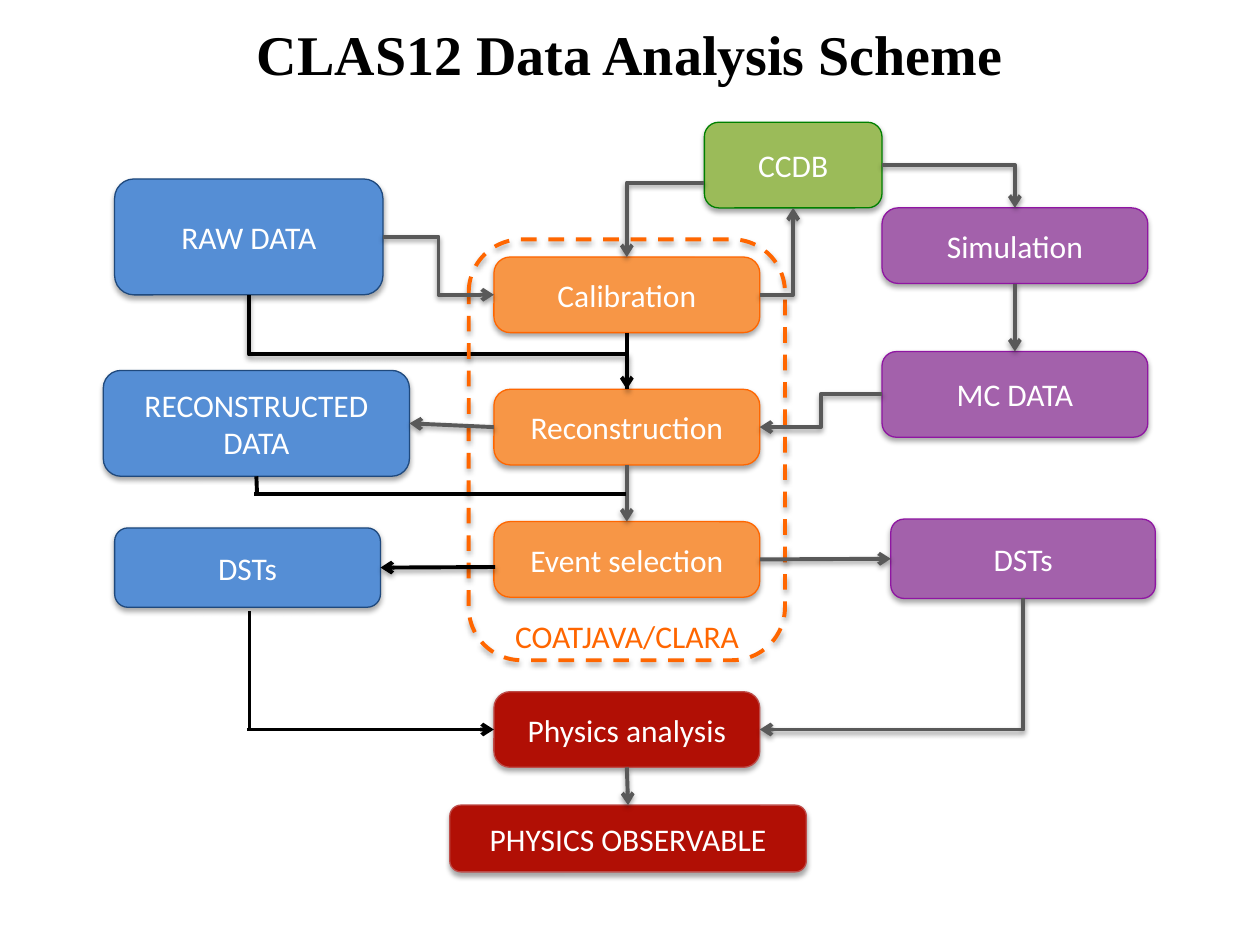
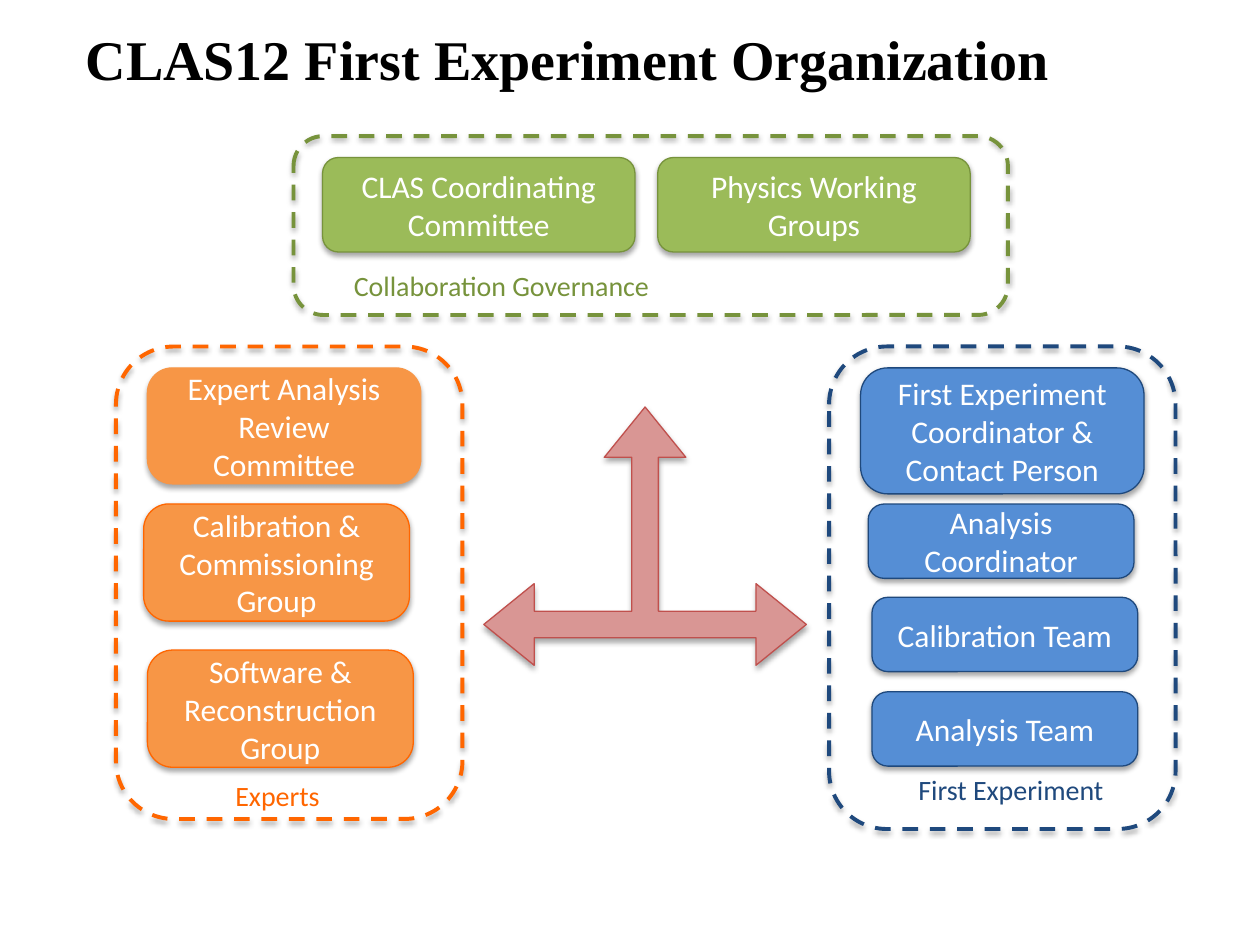
from lxml.etree import SubElement
from pptx import Presentation
from pptx.dml.color import RGBColor
from pptx.enum.dml import MSO_LINE
from pptx.enum.shapes import MSO_CONNECTOR as LINK, MSO_SHAPE as SHAPE
from pptx.enum.text import MSO_ANCHOR as ANCHOR, MSO_AUTO_SIZE as AUTO_SIZE, PP_ALIGN as ALIGN
from pptx.oxml.ns import qn
from pptx.util import Inches, Pt

TOP, LEFT, BOTTOM, RIGHT = range(4)

BLACK, WHITE, GREY = "000000", "FFFFFF", "595959"
# Each scheme is a fill and an outline
BLUE = ("558ED5", "1F497D")
GREEN = ("9BBB59", "77933C")
BRIGHT_GREEN = ("9BBB59", "008000")
ORANGE = ("F79646", "FF6600")
PLAIN_ORANGE = ("F79646", "F79646")
PURPLE = ("A361AB", "8F16A2")
RED = ("B10F05", "BE4B48")
PINK = ("D99694", "C0504D")

SMALL_CORNER, LARGE_CORNER = 0.167, 0.215


def color(hex_text):
    return RGBColor.from_string(hex_text)


def add_shadow(spPr, opacity, distance):
    effects = spPr.find(qn("a:effectLst"))
    shadow = SubElement(effects, qn("a:outerShdw"), blurRad=str(Pt(3.1)),
                        dist=str(Pt(distance)), dir="5400000", rotWithShape="0")
    black = SubElement(shadow, qn("a:srgbClr"), val=BLACK)
    SubElement(black, qn("a:alpha"), val=str(opacity * 1000))


class Diagram:
    """Holds the deck, the shared style and the current page."""

    def __init__(self):
        self.deck = Presentation()
        self.deck.slide_width, self.deck.slide_height = Inches(10), Inches(7.5)
        self.page = None

    def new_page(self, title, left, top, width):
        self.page = self.deck.slides.add_slide(self.deck.slide_layouts[5])
        box = self.page.shapes.title
        box.left, box.top = Inches(left), Inches(top)
        box.width, box.height = Inches(width), Inches(0.43)
        frame = box.text_frame
        frame.margin_left = frame.margin_right = frame.margin_top = frame.margin_bottom = 0
        frame.vertical_anchor = ANCHOR.MIDDLE
        self.fill_text(frame, title, 32, BLACK, ALIGN.CENTER, "Times New Roman", True)

    def fill_text(self, frame, text, size, ink, align, font="Calibri", bold=False):
        frame.text = text
        frame.auto_size = AUTO_SIZE.NONE
        for para in frame.paragraphs:
            para.alignment = align
            for span in para.runs:
                span.font.name, span.font.size, span.font.bold = font, Pt(size), bold
                span.font.color.rgb = color(ink)

    def shape(self, kind, place, scheme, adjustments, line_width=0.75):
        shape = self.page.shapes.add_shape(kind, *map(Inches, place))
        for index, value in enumerate(adjustments):
            shape.adjustments[index] = value
        fill, outline = scheme
        if fill:
            shape.fill.solid()
            shape.fill.fore_color.rgb = color(fill)
        else:
            shape.fill.background()
        shape.line.color.rgb = color(outline)
        shape.line.width = Pt(line_width)
        shape.shadow.inherit = False
        add_shadow(shape.element.spPr, 35, 1.8)
        return shape

    def box(self, text, place, scheme, corner=SMALL_CORNER):
        box = self.shape(SHAPE.ROUNDED_RECTANGLE, place, scheme, [corner])
        frame = box.text_frame
        frame.word_wrap = True
        frame.vertical_anchor = ANCHOR.MIDDLE
        self.fill_text(frame, text, 18, WHITE, ALIGN.CENTER)
        return box

    def group_frame(self, place, scheme):
        frame = self.shape(SHAPE.ROUNDED_RECTANGLE, place, (None, scheme[1]), [SMALL_CORNER], 2.25)
        frame.line.dash_style = MSO_LINE.DASH

    def label(self, text, place, size, scheme):
        box = self.page.shapes.add_textbox(*map(Inches, place))
        box.text_frame.word_wrap = False
        self.fill_text(box.text_frame, text, size, scheme[1], ALIGN.LEFT)

    def link(self, start, end, ink=GREY, kind=LINK.STRAIGHT, arrow=True, shadow=True):
        """Join two ends; each is a (box, side) pair or an (x, y) point in inches."""
        def is_point(target):
            return isinstance(target[0], (int, float))

        points = [value for target in (start, end)
                  for value in (map(Inches, target) if is_point(target) else (0, 0))]
        link = self.page.shapes.add_connector(kind, *points)
        if not is_point(start):
            link.begin_connect(*start)
        if not is_point(end):
            link.end_connect(*end)
        link.line.color.rgb = color(ink)
        link.line.width = Pt(2.25)
        spPr = link.element.spPr
        if arrow:
            SubElement(spPr.find(qn("a:ln")), qn("a:tailEnd"), type="arrow")
        SubElement(spPr, qn("a:effectLst"))
        if shadow:
            add_shadow(spPr, 38, 1.6)
        return link

    def elbow(self, start, end, ink=GREY, corners=1, bend=0.5, vertical=False, arrow=True):
        """Bent link with one or two corners; vertical ones leave the start up or down."""
        link = self.link(start, end, ink, LINK.ELBOW, arrow)
        spPr = link.element.spPr
        geometry = spPr.find(qn("a:prstGeom"))
        geometry.set("prst", f"bentConnector{corners + 1}")
        if corners == 2:
            SubElement(geometry.find(qn("a:avLst")), qn("a:gd"),
                       name="adj1", fmla=f"val {round(bend * 100000)}")
        if vertical:
            down, rightward = link.end_y > link.begin_y, link.end_x > link.begin_x
            center_x = (link.begin_x + link.end_x) // 2
            center_y = (link.begin_y + link.end_y) // 2
            link.width, link.height = link.height, link.width
            link.left, link.top = center_x - link.width // 2, center_y - link.height // 2
            frame = spPr.find(qn("a:xfrm"))
            frame.set("rot", str((90 if down else 270) * 60000))
            frame.set("flipH", "0")
            frame.set("flipV", "1" if down == rightward else "0")


def draw_analysis_scheme(diagram):
    diagram.new_page("CLAS12 Data Analysis Scheme", 0.5, 0.21, 9)
    box, link, elbow = diagram.box, diagram.link, diagram.elbow

    raw = box("RAW DATA", (0.91, 1.42, 2.13, 0.92), BLUE)
    reconstructed = box("RECONSTRUCTED DATA", (0.82, 2.94, 2.43, 0.84), BLUE)
    data_dsts = box("DSTs", (0.91, 4.19, 2.11, 0.63), BLUE)
    ccdb = box("CCDB", (5.59, 0.97, 1.41, 0.68), BRIGHT_GREEN)
    calibration, reconstruction, selection = [
        box(text, (3.92, 2.04 + 1.05 * row, 2.11, 0.6), ORANGE, LARGE_CORNER)
        for row, text in enumerate(("Calibration", "Reconstruction", "Event selection"))]
    simulation = box("Simulation", (7, 1.65, 2.11, 0.6), PURPLE, LARGE_CORNER)
    mc_data = box("MC DATA", (7, 2.79, 2.11, 0.68), PURPLE)
    mc_dsts = box("DSTs", (7.07, 4.12, 2.1, 0.63), PURPLE)
    physics = box("Physics analysis", (3.92, 5.49, 2.11, 0.6), RED, LARGE_CORNER)
    observable = box("PHYSICS OBSERVABLE", (3.57, 6.39, 2.83, 0.53), RED)

    elbow((reconstruction, TOP), (raw, BOTTOM), BLACK, corners=2, bend=0.37,
          vertical=True, arrow=False)
    diagram.group_frame((3.72, 1.9, 2.51, 3.34), ORANGE)
    diagram.label("COATJAVA/CLARA", (3.99, 4.85, 1.97, 0.4), 18, ORANGE)

    elbow((raw, RIGHT), (calibration, LEFT), corners=2)
    elbow((5.59, 1.45), (calibration, TOP))
    elbow((ccdb, RIGHT), (simulation, TOP))
    elbow((calibration, RIGHT), (ccdb, BOTTOM))
    elbow((mc_data, LEFT), (reconstruction, RIGHT), corners=2)
    elbow((mc_dsts, BOTTOM), (physics, RIGHT), vertical=True)

    link((simulation, BOTTOM), (mc_data, TOP))
    link((reconstruction, LEFT), (reconstructed, RIGHT))
    link((reconstruction, BOTTOM), (selection, TOP))
    link((selection, RIGHT), (mc_dsts, LEFT))
    link((physics, BOTTOM), (observable, TOP))
    link((3.93, 4.5), (data_dsts, RIGHT), BLACK)
    link((calibration, BOTTOM), (reconstruction, TOP), BLACK, shadow=False)
    link((1.96, 5.79), (physics, LEFT), BLACK, shadow=False)
    link((1.98, 5.79), (1.98, 4.85), BLACK, arrow=False, shadow=False)
    link((4.97, 3.92), (2.02, 3.92), BLACK, arrow=False, shadow=False)
    link((2.04, 3.92), (reconstructed, BOTTOM), BLACK, arrow=False, shadow=False)


def draw_organization(diagram):
    diagram.new_page("CLAS12 First Experiment Organization", -0.08, 0.25, 9.17)
    groups = [
        ("Collaboration Governance", (2.71, 2.08, 2.54, 0.36), (2.33, 1.08, 5.67, 1.42), GREEN),
        ("First Experiment", (7.19, 6.08, 1.67, 0.36), (6.58, 2.75, 2.75, 3.83), BLUE),
        ("Experts", (1.77, 6.13, 0.87, 0.36), (0.92, 2.75, 2.75, 3.75), ORANGE),
    ]
    for name, label_place, frame_place, scheme in groups:
        diagram.group_frame(frame_place, scheme)
        diagram.label(name, label_place, 16, scheme)

    for column, text in enumerate(("CLAS Coordinating Committee", "Physics Working Groups")):
        diagram.box(text, (2.56 + 2.66 * column, 1.25, 2.48, 0.75), GREEN)

    members = [
        ("First Experiment Coordinator & Contact Person", (6.83, 2.92, 2.25, 1), BLUE),
        ("Analysis Coordinator", (6.89, 4, 2.11, 0.59), BLUE),
        ("Calibration Team", (6.92, 4.74, 2.11, 0.59), BLUE),
        ("Analysis Team", (6.92, 5.49, 2.11, 0.59), BLUE),
        ("Expert Analysis Review Committee", (1.17, 2.92, 2.17, 0.92), PLAIN_ORANGE),
        ("Calibration & Commissioning Group", (1.14, 4, 2.11, 0.93), ORANGE),
        ("Software & Reconstruction\nGroup", (1.17, 5.16, 2.11, 0.93), ORANGE),
    ]
    for text, place, scheme in members:
        diagram.box(text, place, scheme, LARGE_CORNER)

    diagram.shape(SHAPE.LEFT_RIGHT_UP_ARROW, (3.84, 3.23, 2.56, 2.05), PINK,
                  (0.103, 0.158, 0.195))


def main():
    diagram = Diagram()
    draw_analysis_scheme(diagram)
    draw_organization(diagram)
    diagram.deck.save("out.pptx")


if __name__ == "__main__":
    main()
